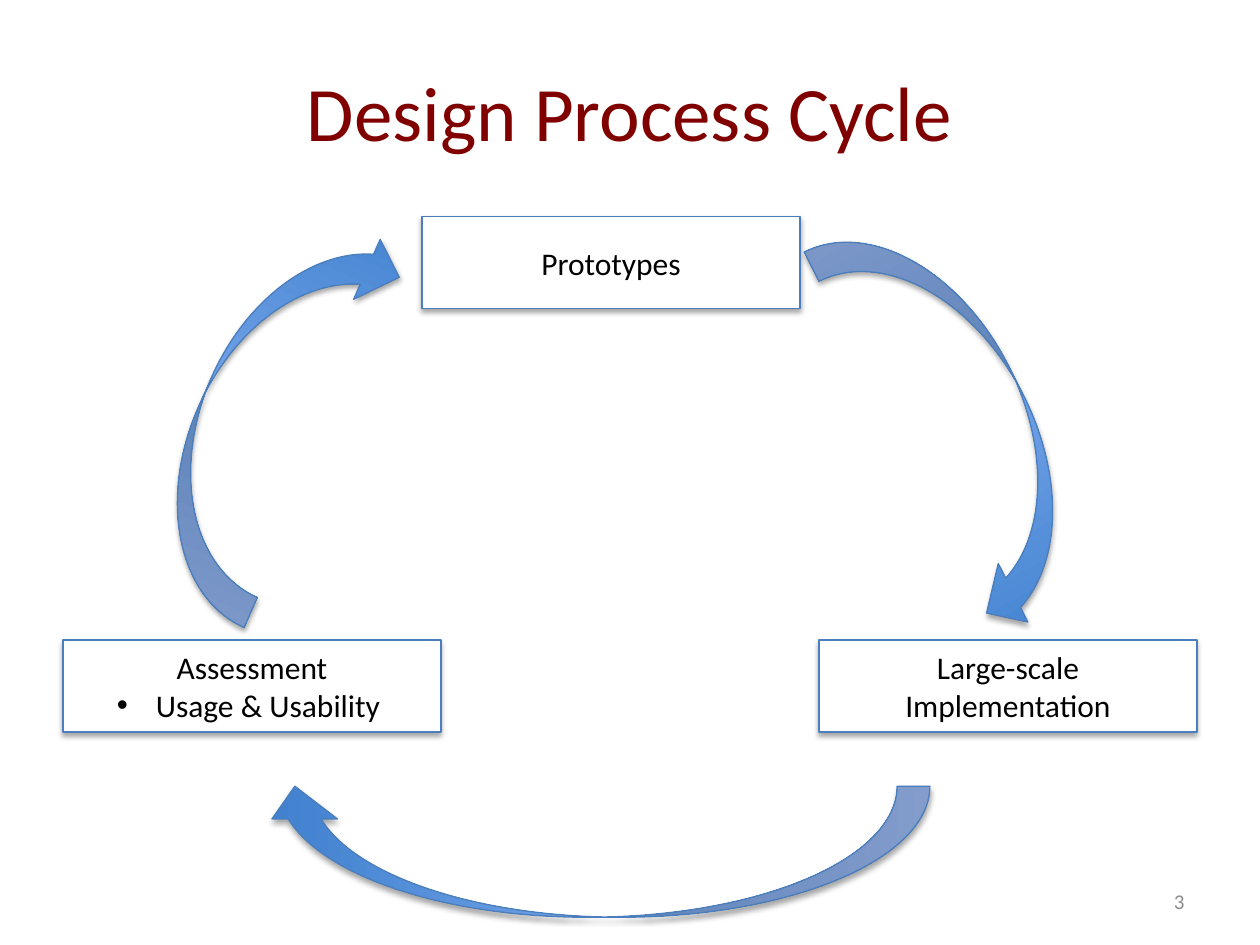
from lxml.etree import SubElement
from pptx import Presentation
from pptx.dml.color import RGBColor
from pptx.enum.shapes import MSO_SHAPE as Shape
from pptx.enum.text import MSO_ANCHOR as Anchor, PP_ALIGN as Align
from pptx.oxml.ns import qn
from pptx.util import Inches, Pt

COLORS = {
    "title": "800000", "text": "000000", "number": "8C8C8C", "box": "FFFFFF",
    "line": "4B7EBC", "arrow_head": "3F80CE", "arrow_tail": "A4C4FF", "shadow": "000000",
}
FONT = "Calibri"

# text, (left, top, width, height), size, colour, alignment
LABELS = [
    ("Design Process Cycle", (0.5, 0.25, 9, 1.25), 44, "title", Align.CENTER),
    ("3", (7.17, 6.95, 2.33, 0.4), 12, "number", Align.RIGHT),
]
# left, top, lines as (text, bulleted)
BOX_SIZE = (3, 0.73)
STAGES = [
    (3.35, 1.72, [("Prototypes", False)]),
    (0.5, 5.08, [("Assessment", False), ("Usage & Usability ", True)]),
    (6.5, 5.08, [("Large-scale Implementation", False)]),
]
# left, top, length, rotation
ARROW_WIDTH = 1.04
ARROWS = [
    (7.11, 1.58, 3.47, 333.2),
    (4.21, 4.11, 5.3, 90),
    (1.61, 1.61, 3.3, 203.9),
]


def rgb(name):
    return RGBColor.from_string(COLORS[name])


def add_bullet(para):
    props = para._p.get_or_add_pPr()
    indent = Inches(0.31)
    props.set("marL", str(indent))
    props.set("indent", str(-indent))
    SubElement(props, qn("a:buFont"), typeface="Arial")
    SubElement(props, qn("a:buChar"), char="•")


def write(shape, lines, size, color, align):
    frame = shape.text_frame
    frame.word_wrap = True
    frame.vertical_anchor = Anchor.MIDDLE
    for index, (text, bulleted) in enumerate(lines):
        para = frame.add_paragraph() if index else frame.paragraphs[0]
        para.alignment = align
        if bulleted:
            add_bullet(para)
        span = para.add_run()
        span.text = text
        span.font.name = FONT
        span.font.size = Pt(size)
        span.font.color.rgb = rgb(color)


def add_outlined(page, kind, place):
    """Add a preset shape with the thin blue line and the soft shadow below."""
    shape = page.shapes.add_shape(kind, *map(Inches, place))
    shape.line.color.rgb = rgb("line")
    shape.line.width = Pt(0.75)
    shape.shadow.inherit = False
    effects = shape._element.spPr.find(qn("a:effectLst"))
    shadow = SubElement(effects, qn("a:outerShdw"), blurRad=str(Pt(3.1)),
                        dist=str(Pt(1.8)), dir="5400000", rotWithShape="0")
    tint = SubElement(shadow, qn("a:srgbClr"), val=COLORS["shadow"])
    SubElement(tint, qn("a:alpha"), val="35000")
    return shape


def add_stage(page, left, top, lines):
    box = add_outlined(page, Shape.RECTANGLE, (left, top, *BOX_SIZE))
    box.fill.solid()
    box.fill.fore_color.rgb = rgb("box")
    write(box, lines, 18, "text", Align.CENTER)


def add_arrow(page, left, top, length, rotation):
    arrow = add_outlined(page, Shape.CURVED_LEFT_ARROW, (left, top, ARROW_WIDTH, length))
    arrow.rotation = rotation
    arrow.fill.gradient()
    arrow.fill.gradient_angle = 90
    for stop, name in zip(arrow.fill.gradient_stops, ("arrow_head", "arrow_tail")):
        stop.color.rgb = rgb(name)


def main():
    deck = Presentation()
    deck.slide_width, deck.slide_height = Inches(10), Inches(7.5)
    page = deck.slides.add_slide(deck.slide_layouts[6])
    for text, place, size, color, align in LABELS:
        label = page.shapes.add_textbox(*map(Inches, place))
        write(label, [(text, False)], size, color, align)
    for stage in STAGES:
        add_stage(page, *stage)
    for arrow in ARROWS:
        add_arrow(page, *arrow)
    deck.save("out.pptx")


if __name__ == "__main__":
    main()
